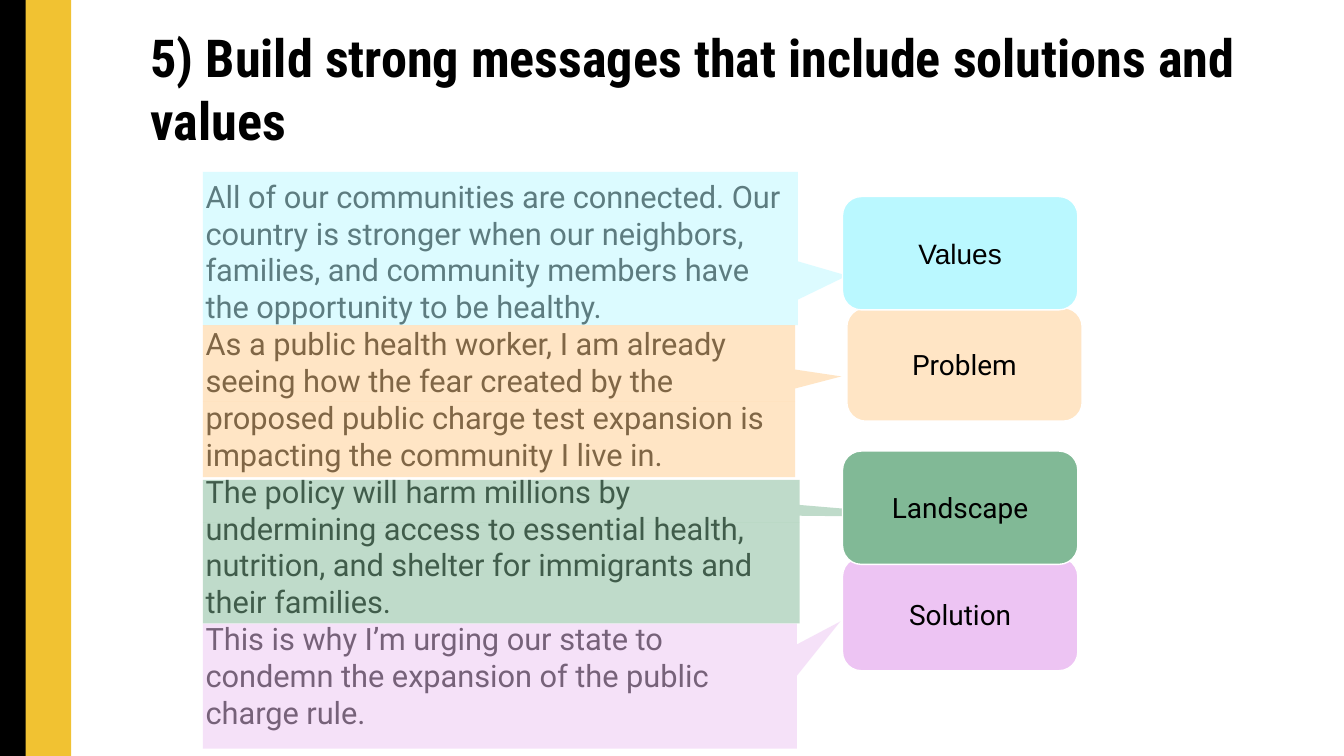
from lxml.etree import SubElement
from pptx import Presentation
from pptx.dml.color import RGBColor
from pptx.enum.shapes import MSO_SHAPE as SHAPE
from pptx.enum.text import MSO_ANCHOR as ANCHOR, MSO_AUTO_SIZE as AUTO, PP_ALIGN as ALIGN
from pptx.oxml.ns import qn
from pptx.util import Inches, Pt

BLACK = RGBColor(0x00, 0x00, 0x00)
WHITE = RGBColor(0xFF, 0xFF, 0xFF)
GOLD = RGBColor(0xF1, 0xC2, 0x32)
ORANGE = RGBColor(0xFF, 0xCD, 0x8C)
CYAN = RGBColor(0xBA, 0xF8, 0xFF)
PURPLE = RGBColor(0xED, 0xC4, 0xF3)
GREEN = RGBColor(0x81, 0xB9, 0x96)

WIDTH = 10
HEIGHT = WIDTH * 9 / 16
ROW_LEFT, ROW_WIDTH = 1.51, 6.51
LABEL_HEIGHT = 0.15 * HEIGHT

TITLE = "5) Build strong messages that include solutions and values"
MESSAGE = [
    "All of our communities are connected. Our country is stronger when our neighbors, "
    "families, and community members have the opportunity to be healthy.",
    "As a public health worker, I am already seeing how the fear created by the proposed "
    "public charge test expansion is impacting the community I live in.",
    "The policy will harm millions by undermining access to essential health, nutrition, "
    "and shelter for immigrants and their families.",
    "This is why I’m urging our state to condemn the expansion of the public charge rule.",
]

ROWS = [
    dict(label="Problem", color=ORANGE, top=2.42, height=1.13, band=0.677, split=0.5,
         tip=(0.578, 0.174), label_at=(0.736, -0.115), label_alpha=50),
    dict(label="Values", color=CYAN, top=1.28, height=1.14, band=0.68,
         tip=(0.583, 0.177), label_at=(0.731, 0.16), font="Arial"),
    dict(label="Solution", color=PURPLE, top=4.64, height=0.93, band=0.679,
         tip=(0.573, -0.517), label_at=(0.731, -0.53)),
    dict(label="Landscape", color=GREEN, top=3.57, height=1.07, band=0.682, split=0.3,
         tip=(0.747, 0.37), label_at=(0.731, -0.2)),
]


def apply(target, values):
    for name, value in values.items():
        setattr(target, name, value)


def place(sp, box):
    apply(sp, dict(zip(("left", "top", "width", "height"), map(Inches, box))))


def format_font(font, name, size, bold=False):
    apply(font, dict(name=name, size=Pt(size), bold=bold))
    font.color.rgb = BLACK


def add_block(shapes, kind, box, color, alpha=100):
    sp = shapes.add_shape(kind, *map(Inches, box))
    sp.shadow.inherit = False
    sp.fill.solid()
    sp.fill.fore_color.rgb = color
    sp.line.fill.background()
    if alpha < 100:
        clr = sp.fill._xPr.find(qn("a:solidFill"))[0]
        SubElement(clr, qn("a:alpha"), val=str(alpha * 1000))
    return sp


def fill_placeholder(sp, box, texts, anchor, font, line, indent=0):
    place(sp, box)
    tf = sp.text_frame
    apply(tf, dict(word_wrap=True, auto_size=AUTO.NONE, vertical_anchor=anchor,
                   margin_left=Inches(0.07), margin_right=Inches(0.07),
                   margin_top=Inches(0.04), margin_bottom=Inches(0.04)))
    tf.text = "\n".join(texts)
    for p in tf.paragraphs:
        pPr = p._p.get_or_add_pPr()
        pPr.set("marL", str(Inches(indent)))
        pPr.set("indent", "0")
        SubElement(pPr, qn("a:buNone"))
        apply(p, dict(alignment=ALIGN.LEFT, space_before=Pt(0), line_spacing=Pt(line)))
        format_font(p.runs[0].font, **font)


def add_side_bars(shapes, box):
    left, top, width, height = box
    add_block(shapes, SHAPE.RECTANGLE, (left, top, 0.45 * width, height), BLACK)
    add_block(shapes, SHAPE.RECTANGLE,
              (left + 0.36 * width, top, 0.64 * width, height), GOLD)


def add_message_row(shapes, box, label, color, band, tip, label_at,
                    split=1, label_alpha=100, font="Roboto"):
    left, top, width, height = box
    group = shapes.add_group_shape().shapes
    if split < 1:
        add_block(group, SHAPE.RECTANGLE,
                  (left, top + split * height, band * width, (1 - split) * height),
                  color, 50)
    callout = add_block(group, SHAPE.RECTANGULAR_CALLOUT,
                        (left, top, band * width, split * height), color, 50)
    callout.adjustments[0], callout.adjustments[1] = tip

    x, y = label_at
    sp = add_block(group, SHAPE.ROUNDED_RECTANGLE,
                   (left + x * width, top + y * height, 0.269 * width, LABEL_HEIGHT),
                   color, label_alpha)
    sp.line.color.rgb = WHITE
    sp.line.width = Pt(0.75)
    tf = sp.text_frame
    tf.vertical_anchor = ANCHOR.MIDDLE
    p = tf.paragraphs[0]
    p.alignment = ALIGN.CENTER
    r = p.add_run()
    r.text = label
    format_font(r.font, font, 15)


def main():
    prs = Presentation()
    prs.slide_width, prs.slide_height = Inches(WIDTH), Inches(HEIGHT)
    s = prs.slides.add_slide(prs.slide_layouts[1])
    title, body = s.placeholders
    add_side_bars(s.shapes, (0, -0.01, 0.053 * WIDTH, HEIGHT + 0.02))
    fill_placeholder(title, (0.39, 0.34, 9.23, 0.63), [TITLE], ANCHOR.MIDDLE,
                     dict(name="Roboto Condensed", size=28, bold=True), 33.6, 0.66)
    fill_placeholder(body, (1.46, 1.28, 4.55, 3.3), MESSAGE, ANCHOR.TOP,
                     dict(name="Roboto", size=16.5), 19.76)
    for row in ROWS:
        parts = dict(row)
        box = (ROW_LEFT, parts.pop("top"), ROW_WIDTH, parts.pop("height"))
        add_message_row(s.shapes, box, **parts)
    prs.save("out.pptx")


if __name__ == "__main__":
    main()
